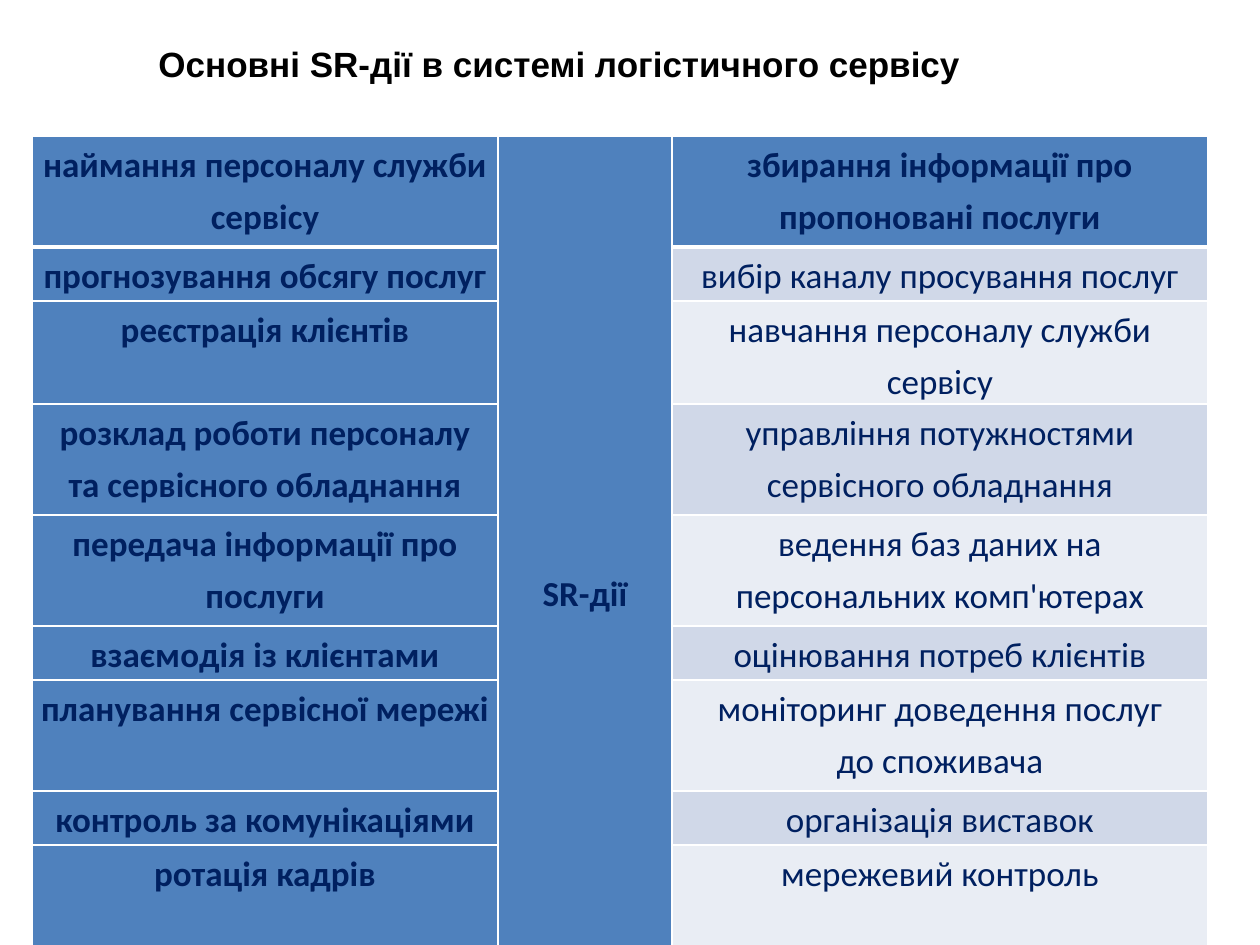
import pptx
import pptx.util
import pptx.dml.color
import pptx.enum.text
import pptx.oxml
import pptx.oxml.ns
import lxml.etree

RGBColor = pptx.dml.color.RGBColor
Align = pptx.enum.text.PP_ALIGN
Anchor = pptx.enum.text.MSO_ANCHOR

BLUE = RGBColor(0x4F, 0x81, 0xBD)
NAVY = RGBColor(0x00, 0x20, 0x60)
BLACK = RGBColor(0x00, 0x00, 0x00)
WHITE = RGBColor(0xFF, 0xFF, 0xFF)
BANDS = [RGBColor(0xE9, 0xED, 0xF4), RGBColor(0xD0, 0xD8, 0xE8)]

ACTIONS = [
    ("наймання персоналу служби сервісу", "збирання інформації про пропоновані послуги"),
    ("прогнозування обсягу послуг", "вибір каналу просування послуг"),
    ("реєстрація клієнтів", "навчання персоналу служби сервісу"),
    ("розклад роботи персоналу\nта сервісного обладнання", "управління потужностями сервісного обладнання"),
    ("передача інформації про послуги", "ведення баз даних на персональних комп'ютерах"),
    ("взаємодія із клієнтами", "оцінювання потреб клієнтів"),
    ("планування сервісної мережі", "моніторинг доведення послуг\nдо споживача"),
    ("контроль за комунікаціями", "організація виставок"),
    ("ротація кадрів", "мережевий контроль"),
]
COLUMN_WIDTHS = [466, 174, 536]
ROW_HEIGHTS = [111, 54, 103, 111, 111, 54, 111, 54, 99]


def px(length):
    return pptx.util.Emu(round(length * 914400 / 126))


def fill_cell(cell, text, fill, bold, header):
    cell.fill.solid()
    cell.fill.fore_color.rgb = fill
    cell.margin_left = cell.margin_right = px(9)
    cell.margin_top = cell.margin_bottom = 0
    cell.text_frame.text = text
    for para in cell.text_frame.paragraphs:
        para.alignment = Align.CENTER
        para.line_spacing = 1.2
        para.font.name = "Calibri"
        para.font.size = pptx.util.Pt(20)
        para.font.bold = bold
        para.font.color.rgb = NAVY
    # Borders go ahead of the fill in the cell properties
    properties = cell._tc.get_or_add_tcPr()
    for place, side in enumerate(("lnL", "lnR", "lnT", "lnB")):
        points = 3 if header and side == "lnB" else 1
        border = pptx.oxml.parse_xml(
            f'<a:{side} {pptx.oxml.ns.nsdecls("a")} w="{pptx.util.Pt(points)}">'
            f'<a:solidFill><a:srgbClr val="{WHITE}"/></a:solidFill></a:{side}>')
        properties.insert(place, border)


deck = pptx.Presentation()
deck.slide_width = px(1260)
deck.slide_height = px(945)
page = deck.slides.add_slide(deck.slide_layouts[6])

# Table of actions
frame = page.shapes.add_table(len(ACTIONS), 3, px(32), px(136),
                              px(sum(COLUMN_WIDTHS)), px(sum(ROW_HEIGHTS)))
table = frame.table
for column, width in zip(table.columns, COLUMN_WIDTHS):
    column.width = px(width)
for row, height in zip(table.rows, ROW_HEIGHTS):
    row.height = px(height)

for index, (left, right) in enumerate(ACTIONS):
    header = index == 0
    fill_cell(table.cell(index, 0), left, BLUE, True, header)
    fill_cell(table.cell(index, 2), right, BLUE if header else BANDS[index % 2], header, header)

# Middle column, one cell over all rows
middle = table.cell(0, 1)
middle.merge(table.cell(len(ACTIONS) - 1, 1))
fill_cell(middle, "SR-дії", BLUE, True, True)
middle.vertical_anchor = Anchor.MIDDLE
middle.margin_top = px(74)

# Title
box = page.shapes.add_textbox(px(84), px(36), px(1050), px(55))
box.text_frame.word_wrap = True
box.text_frame.vertical_anchor = Anchor.MIDDLE
para = box.text_frame.paragraphs[0]
para.text = "Основні SR-дії в системі логістичного сервісу"
para.alignment = Align.JUSTIFY
para._p.get_or_add_pPr().set("indent", str(px(62)))
para.font.name = "Arial"
para.font.size = pptx.util.Pt(20)
para.font.bold = True
para.font.color.rgb = BLACK

deck.save("out.pptx")
